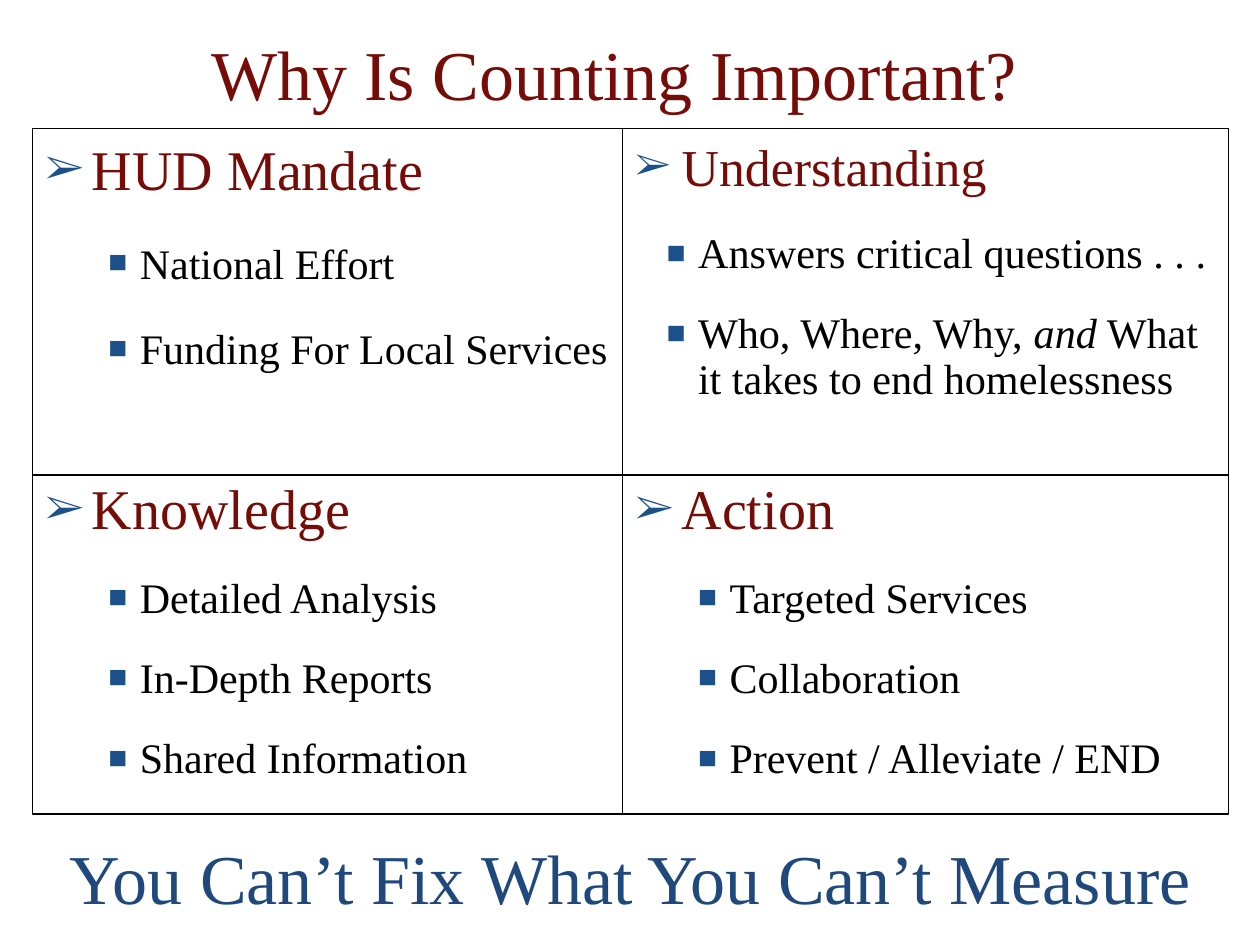
import pptx
import pptx.util
import pptx.dml.color
import pptx.enum.text
import pptx.oxml
import pptx.oxml.ns
from dataclasses import dataclass

Inches, Pt = pptx.util.Inches, pptx.util.Pt
Align, Anchor = pptx.enum.text.PP_ALIGN, pptx.enum.text.MSO_ANCHOR
FONT = "Times New Roman"
COLORS = {"red": "760C07", "blue": "1F497D", "edge": "054697",
          "mark": "1B5088", "black": "000000", "white": "FFFFFF"}
NS = pptx.oxml.ns.nsdecls("a")

# Grid of the four panels
LEFTS, WIDTHS = (0.26, 4.94), (4.68, 4.81)
TOPS, HEIGHTS = (1.02, 3.77), (2.75, 2.69)


@dataclass
class Panel:
    row: int
    col: int
    head: str
    points: list[str]  # text between asterisks is italic
    size: float = 32
    small: float = 24
    indent: float = 0.75
    lead: float | None = 0.9   # line spacing of the heading
    pitch: float | None = 0.9  # line spacing of the points


PANELS = [
    Panel(0, 0, "HUD Mandate", ["National Effort", "Funding For Local Services"],
          lead=None, pitch=None),
    Panel(0, 1, "Understanding",
          ["Answers critical questions . . .",
           "Who, Where, Why, *and* What it takes to end homelessness"],
          size=29.6, small=24.1, indent=0.5, lead=None),
    Panel(1, 0, "Knowledge",
          ["Detailed Analysis", "In-Depth Reports", "Shared Information"]),
    Panel(1, 1, "Action",
          ["Targeted Services", "Collaboration", "Prevent / Alleviate / END"]),
]


def color(name: str) -> pptx.dml.color.RGBColor:
    return pptx.dml.color.RGBColor.from_string(COLORS[name])


def place(shape, left: float, top: float, width: float, height: float) -> None:
    shape.left, shape.top = Inches(left), Inches(top)
    shape.width, shape.height = Inches(width), Inches(height)


def paint(shape) -> None:
    shape.fill.solid()
    shape.fill.fore_color.rgb = color("white")


def style(run, size: float, tint: str) -> None:
    run.font.name, run.font.size, run.font.bold = FONT, Pt(size), False
    run.font.color.rgb = color(tint)


def banner(shape, text: str, tint: str) -> None:
    """Fill a shape with one large centred line."""
    paint(shape)
    frame = shape.text_frame
    frame.text, frame.word_wrap = text, True
    frame.auto_size = pptx.enum.text.MSO_AUTO_SIZE.NONE
    frame.paragraphs[0].alignment = Align.CENTER
    style(frame.paragraphs[0].runs[0], 40, tint)


def bullet(para, char: str, left: float, hang: float) -> None:
    props = para._p.get_or_add_pPr()
    props.set("marL", str(Inches(left)))
    props.set("indent", str(-Inches(hang)))
    for xml in (f'<a:buClr {NS}><a:srgbClr val="{COLORS["mark"]}"/></a:buClr>',
                f'<a:buSzPct {NS} val="75000"/>',
                f'<a:buFont {NS} typeface="{FONT}"/>',
                f'<a:buChar {NS} char="{char}"/>'):
        props.append(pptx.oxml.parse_xml(xml))


def write(para, text: str, size: float, tint: str, pitch: float | None) -> None:
    para.alignment = Align.LEFT
    para.space_before = Pt(20)
    para.line_spacing = pitch or 1.0
    for index, part in enumerate(text.split("*")):
        run = para.add_run()
        run.text = part
        style(run, size, tint)
        if index % 2:
            run.font.italic = True


def draw(shape, panel: Panel) -> None:
    place(shape, LEFTS[panel.col], TOPS[panel.row],
          WIDTHS[panel.col], HEIGHTS[panel.row])
    if panel.col:
        paint(shape)
    shape.line.color.rgb, shape.line.width = color("black"), Pt(0.75)
    frame = shape.text_frame
    frame.vertical_anchor = Anchor.TOP
    frame.auto_size = pptx.enum.text.MSO_AUTO_SIZE.NONE
    head = frame.paragraphs[0]
    write(head, panel.head, panel.size, "red", panel.lead)
    bullet(head, "➢", 0.37, 0.37)
    for point in panel.points:
        para = frame.add_paragraph()
        write(para, point, panel.small, "black", panel.pitch)
        bullet(para, "■", panel.indent, 0.25)


def main() -> None:
    deck = pptx.Presentation()
    deck.slide_width, deck.slide_height = Inches(10), Inches(7.5)
    slide = deck.slides.add_slide(deck.slide_layouts.get_by_name("Comparison"))

    # Title
    title = slide.shapes.title
    place(title, 0, 0.13, 9.75, 0.89)
    banner(title, "Why Is Counting Important?", "red")
    title.text_frame.vertical_anchor = Anchor.MIDDLE

    # Closing line, behind the panels
    foot = slide.shapes.add_textbox(Inches(0), Inches(6.06), Inches(10), Inches(1.21))
    banner(foot, "You Can’t Fix What You Can’t Measure", "blue")
    line = foot.text_frame.paragraphs[0]
    line.line_spacing = Pt(85)
    line.runs[0].font._element.insert(0, pptx.oxml.parse_xml(
        f'<a:ln {NS} w="12700"><a:solidFill><a:srgbClr val="{COLORS["edge"]}"/>'
        '</a:solidFill></a:ln>'))
    title.element.addprevious(foot.element)

    # Panels
    bodies = [item for item in slide.placeholders
              if 1 <= item.placeholder_format.idx <= 4]
    for shape, panel in zip(bodies, PANELS):
        draw(shape, panel)

    deck.save("out.pptx")


if __name__ == "__main__":
    main()
